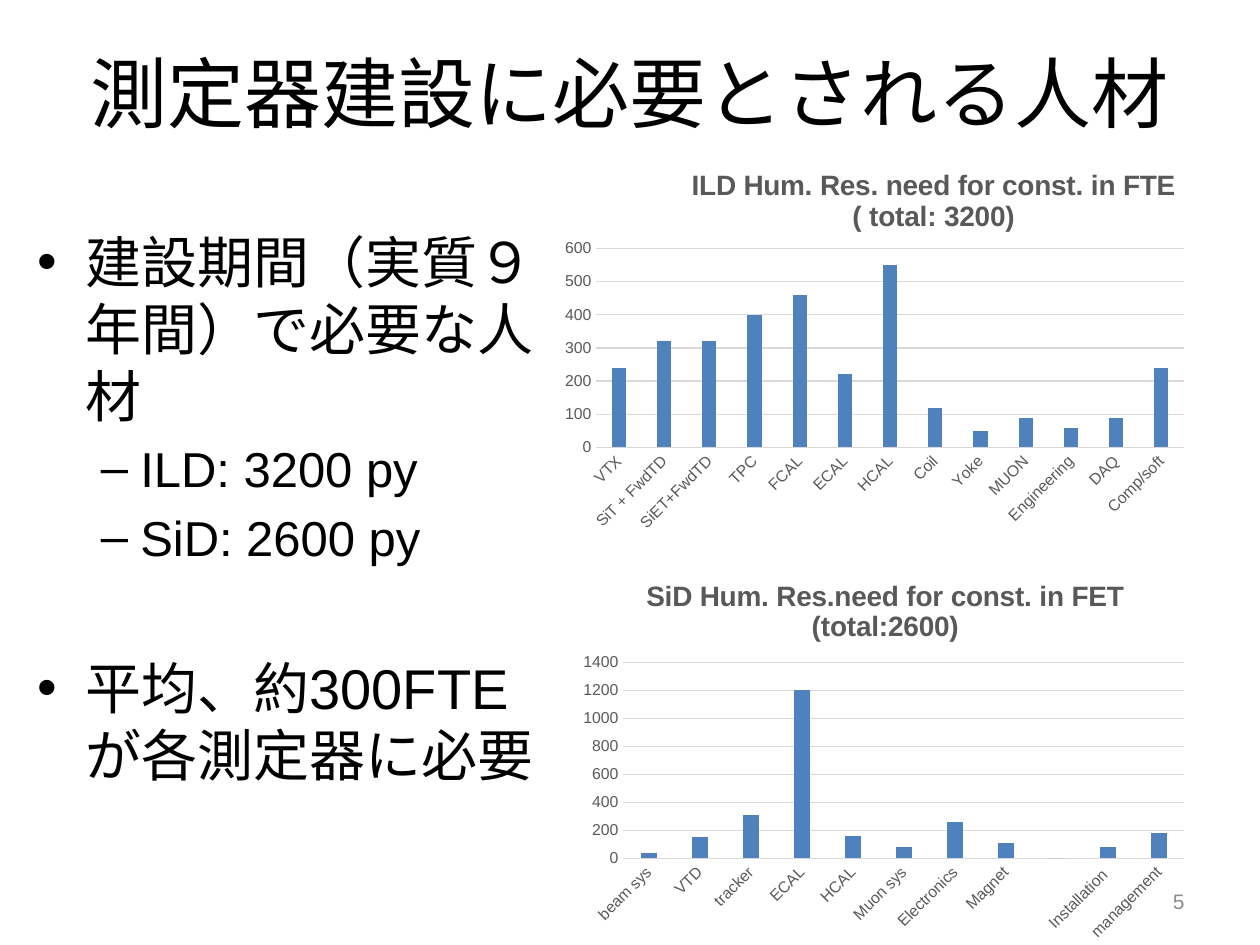
"""Build the slide on the staff needed to construct the two detectors."""
import pptx
import pptx.chart.data
import pptx.dml.color
import pptx.enum.chart
import pptx.enum.text
import pptx.oxml
import pptx.oxml.ns
import pptx.util
from pptx.util import Cm

RGB = pptx.dml.color.RGBColor
BLACK = RGB(0x00, 0x00, 0x00)
DARK = RGB(0x59, 0x59, 0x59)
GRAY = RGB(0x8C, 0x8C, 0x8C)
PALE = RGB(0xD9, 0xD9, 0xD9)
BLUE = RGB(0x4F, 0x81, 0xBD)
ALIGN = pptx.enum.text.PP_ALIGN
TICK = pptx.enum.chart.XL_TICK_MARK
qn = pptx.oxml.ns.qn

ILD = {"VTX": 240, "SiT + FwdTD": 320, "SiET+FwdTD": 320, "TPC": 400,
       "FCAL": 460, "ECAL": 220, "HCAL": 550, "Coil": 120, "Yoke": 50,
       "MUON": 90, "Engineering": 60, "DAQ": 90, "Comp/soft": 240}
SID = {"beam sys": 40, "VTD": 150, "tracker": 310, "ECAL": 1200,
       "HCAL": 160, "Muon sys": 80, "Electronics": 260, "Magnet": 110,
       "": 0, "Installation ": 80, "management": 180}


def style(font, size, color, bold=False):
    font.name = "Arial"
    font.size = pptx.util.Pt(size)
    font.color.rgb = color
    font.bold = bold


def write(frame, text, size=32, color=BLACK, bold=False, align=None,
          level=0, before=None):
    para = frame.paragraphs[-1]
    if para.runs:
        para = frame.add_paragraph()
    para.level = level
    if align is not None:
        para.alignment = align
    if before is not None:
        para.space_before = pptx.util.Pt(before)
    run = para.add_run()
    run.text = text
    style(run.font, size, color, bold)


def layout(inner=False, **spots):
    target = '<c:layoutTarget val="inner"/>' if inner else ""
    modes = '<c:xMode val="edge"/><c:yMode val="edge"/>'
    sizes = "".join(f'<c:{key} val="{val}"/>' for key, val in spots.items())
    return pptx.oxml.parse_xml(
        f'<c:layout {pptx.oxml.ns.nsdecls("c")}><c:manualLayout>'
        f"{target}{modes}{sizes}</c:manualLayout></c:layout>")


def place(parent, node):
    old = parent.find(qn("c:layout"))
    if old is not None:
        parent.remove(old)
    tx = parent.find(qn("c:tx"))
    parent.insert(0 if tx is None else parent.index(tx) + 1, node)


class Deck:
    """Holds the style and the current slide."""

    def __init__(self):
        self.show = pptx.Presentation()
        self.show.slide_width = Cm(25.4)
        self.show.slide_height = Cm(19.05)
        self.slide = self.show.slides.add_slide(self.show.slide_layouts[1])

    def holder(self, index, *box):
        shape = self.slide.placeholders[index]
        shape.left, shape.top, shape.width, shape.height = map(Cm, box)
        shape.text_frame.auto_size = pptx.enum.text.MSO_AUTO_SIZE.NONE
        return shape.text_frame

    def title(self, text, *box):
        write(self.holder(0, *box), text, size=44, align=ALIGN.CENTER)

    def body(self, items, *box):
        frame = self.holder(1, *box)
        for text, form in items:
            write(frame, text, **form)

    def number(self, text, *box):
        frame = self.slide.shapes.add_textbox(*map(Cm, box)).text_frame
        frame.word_wrap = True
        frame.vertical_anchor = pptx.enum.text.MSO_ANCHOR.MIDDLE
        write(frame, text, size=12, color=GRAY, align=ALIGN.RIGHT)

    def chart(self, lines, bars, top, step, *box, shift=None):
        data = pptx.chart.data.CategoryChartData(number_format="0")
        data.categories = list(bars)
        data.add_series("Series 1", list(bars.values()))
        kind = pptx.enum.chart.XL_CHART_TYPE.COLUMN_CLUSTERED
        chart = self.slide.shapes.add_chart(kind, *map(Cm, box), data).chart
        style(chart.font, 10, BLACK)
        chart.has_legend = False
        chart.has_title = True
        head = chart.chart_title
        for line in lines:
            write(head.text_frame, line, size=16, color=DARK, bold=True,
                  align=ALIGN.CENTER)
        head.include_in_layout = False
        if shift:
            place(head.format.fill and chart.element.xpath(".//c:title")[0],
                  layout(x=shift[0], y=shift[1]))
        self.bars(chart.plots[0])
        self.axes(chart, top, step)
        place(chart.element.xpath(".//c:plotArea")[0],
              layout(True, x=0.08, y=0.26, w=0.9, h=0.5))

    def bars(self, plot):
        plot.gap_width = 219
        plot.overlap = -27
        plot.vary_by_categories = False
        fill = plot.series[0].format.fill
        fill.solid()
        fill.fore_color.rgb = BLUE

    def axes(self, chart, top, step):
        cat, val = chart.category_axis, chart.value_axis
        for axis in (cat, val):
            axis.major_tick_mark = axis.minor_tick_mark = TICK.NONE
            style(axis.tick_labels.font, 9, DARK)
        val.minimum_scale, val.maximum_scale, val.major_unit = 0, top, step
        val.tick_labels.number_format = "0"
        val.tick_labels.number_format_is_linked = False
        val.format.line.fill.background()
        for line in (cat.format.line, val.major_gridlines.format.line):
            line.color.rgb = PALE
            line.width = pptx.util.Pt(0.75)
        turn = chart.element.xpath(".//c:catAx/c:txPr/a:bodyPr")[0]
        turn.set("rot", "-2700000")
        turn.set("vert", "horz")


def main():
    deck = Deck()
    deck.title("測定器建設に必要とされる人材", 1.27, 0.76, 22.86, 2.16)
    sub = {"size": 28, "level": 1}
    deck.body([("建設期間（実質９年間）で必要な人材", {}),
               ("ILD: 3200 py", sub),
               ("SiD: 2600 py", sub),
               ("平均、約300FTEが各測定器に必要", {"before": 50})],
              0.51, 4.45, 10.8, 12.57)
    deck.number("5", 18.21, 17.65, 5.92, 1.02)
    deck.chart(["ILD Hum. Res. need for const. in FTE", "( total: 3200)"],
               ILD, 600, 100, 10.97, 2.92, 13.16, 8.03, shift=(0.22, 0.05))
    deck.chart(["SiD Hum. Res.need for const. in FET", "(total:2600)"],
               SID, 1400, 200, 11.56, 11.3, 12.57, 7.9)
    deck.show.save("out.pptx")


if __name__ == "__main__":
    main()
